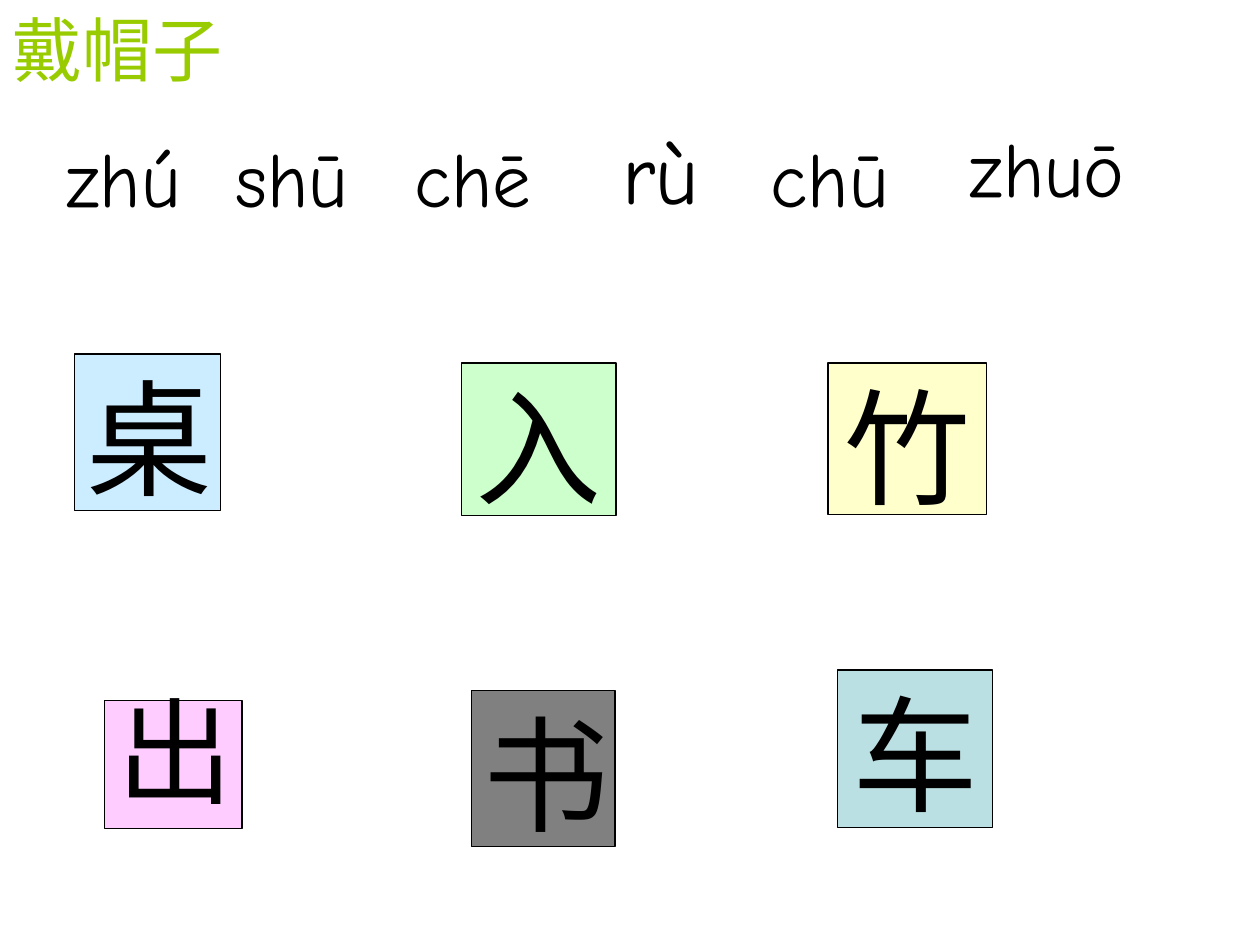
from pptx import Presentation
from pptx.dml.color import RGBColor as Rgb
from pptx.enum.shapes import MSO_SHAPE as Shape
from pptx.enum.text import MSO_ANCHOR as Anchor, MSO_AUTO_SIZE as Fit, PP_ALIGN as Align
from pptx.util import Cm, Pt

HUES = {
    "ink": "000000", "title": "99CC00", "pink": "FFCCFF", "gray": "808080",
    "sky": "CCECFF", "teal": "BBE0E3", "mint": "CCFFCC", "cream": "FFFFCC",
}

# Pinyin hats: text, left, top, width, height (cm), size, wrap
HATS = [
    ("zhú", 1.09, 2.51, 3.07, 2.13, 44, False),
    ("shū", 4.5, 2.51, 3, 2.13, 44, False),
    ("chē", 8.1, 2.51, 3.07, 2.13, 44, False),
    ("rù", 12.29, 2.31, 3.4, 2.31, 48, True),
    ("chū", 15.29, 2.51, 3.05, 2.13, 44, False),
    ("zhuō", 19.3, 2.31, 3.89, 2.13, 44, False),
]

# Character cards: text, left, top, width, height (cm), fill, size, line spacing
CARDS = [
    ("桌", 1.5, 7.14, 2.95, 3.15, "sky", 72, 1),
    ("入", 9.3, 7.32, 3.12, 3.07, "mint", 72, 1),
    ("竹", 16.69, 7.32, 3.2, 3.05, "cream", 72, 1),
    ("出", 2.11, 14.12, 2.77, 2.59, "pink", 66, 0.8),
    ("书", 9.5, 13.92, 2.9, 3.15, "gray", 72, 1),
    ("车", 16.89, 13.51, 3.12, 3.18, "teal", 72, 1),
]


def write(shape, text, size, face="Comic Neue", hue="ink", align=Align.LEFT,
          wrap=False, fit=Fit.SHAPE_TO_FIT_TEXT, gap=1):
    frame = shape.text_frame
    frame.word_wrap = wrap
    frame.auto_size = fit
    frame.vertical_anchor = Anchor.TOP
    para = frame.paragraphs[0]
    para.alignment = align
    para.line_spacing = gap
    run = para.add_run()
    run.text = text
    run.font.name = face
    run.font.size = Pt(size)
    run.font.color.rgb = Rgb.from_string(HUES[hue])


deck = Presentation()
deck.slide_width, deck.slide_height = Cm(25.4), Cm(19.05)
page = deck.slides.add_slide(deck.slide_layouts[6]).shapes

# Title
write(page.add_textbox(0, 0, Cm(4.75), Cm(1.96)), "戴帽子", 40, hue="title")

# Pinyin row
for text, *box, size, wrap in HATS:
    write(page.add_textbox(*map(Cm, box)), text, size, wrap=wrap)

# Cards
for text, *box, hue, size, gap in CARDS:
    card = page.add_shape(Shape.RECTANGLE, *map(Cm, box))
    card.shadow.inherit = False
    card.fill.solid()
    card.fill.fore_color.rgb = Rgb.from_string(HUES[hue])
    card.line.color.rgb = Rgb.from_string(HUES["ink"])
    card.line.width = Pt(0.75)
    write(card, text, size, face="Arial", align=Align.CENTER, wrap=True,
          fit=Fit.NONE, gap=gap)

deck.save("out.pptx")
